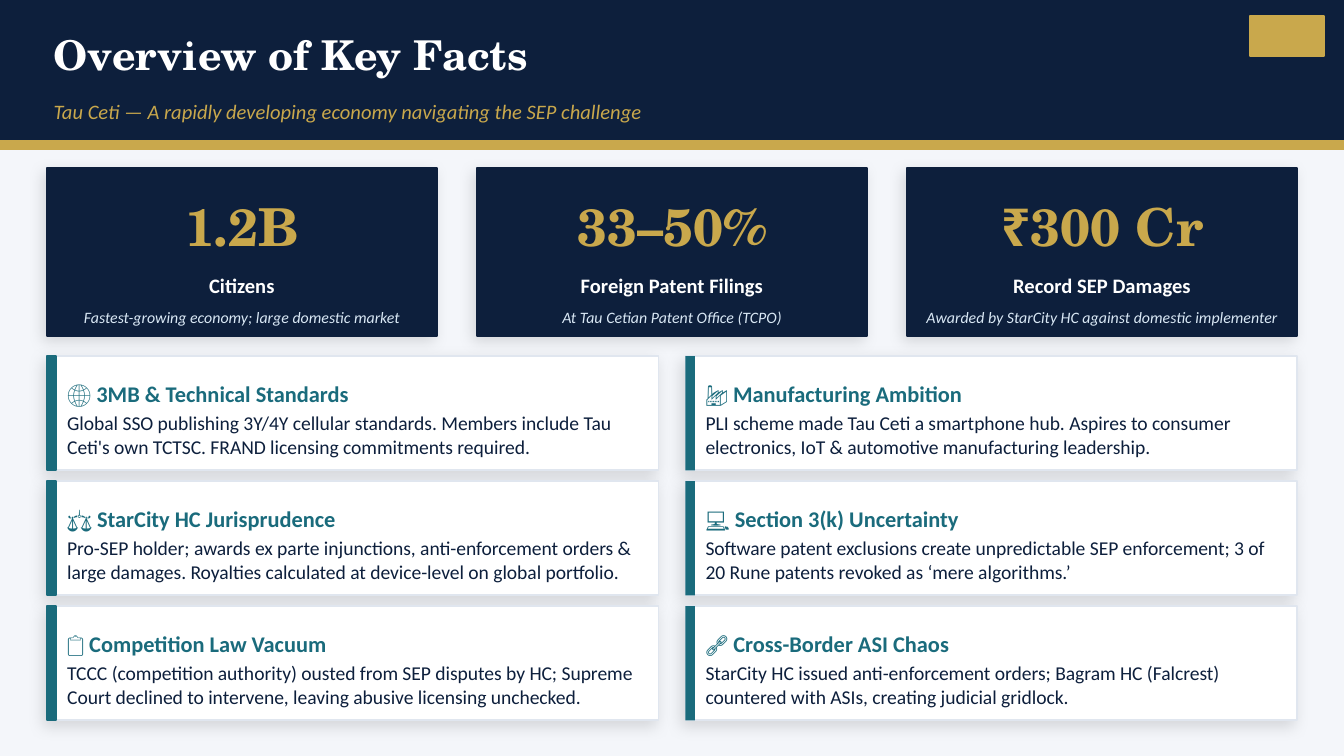
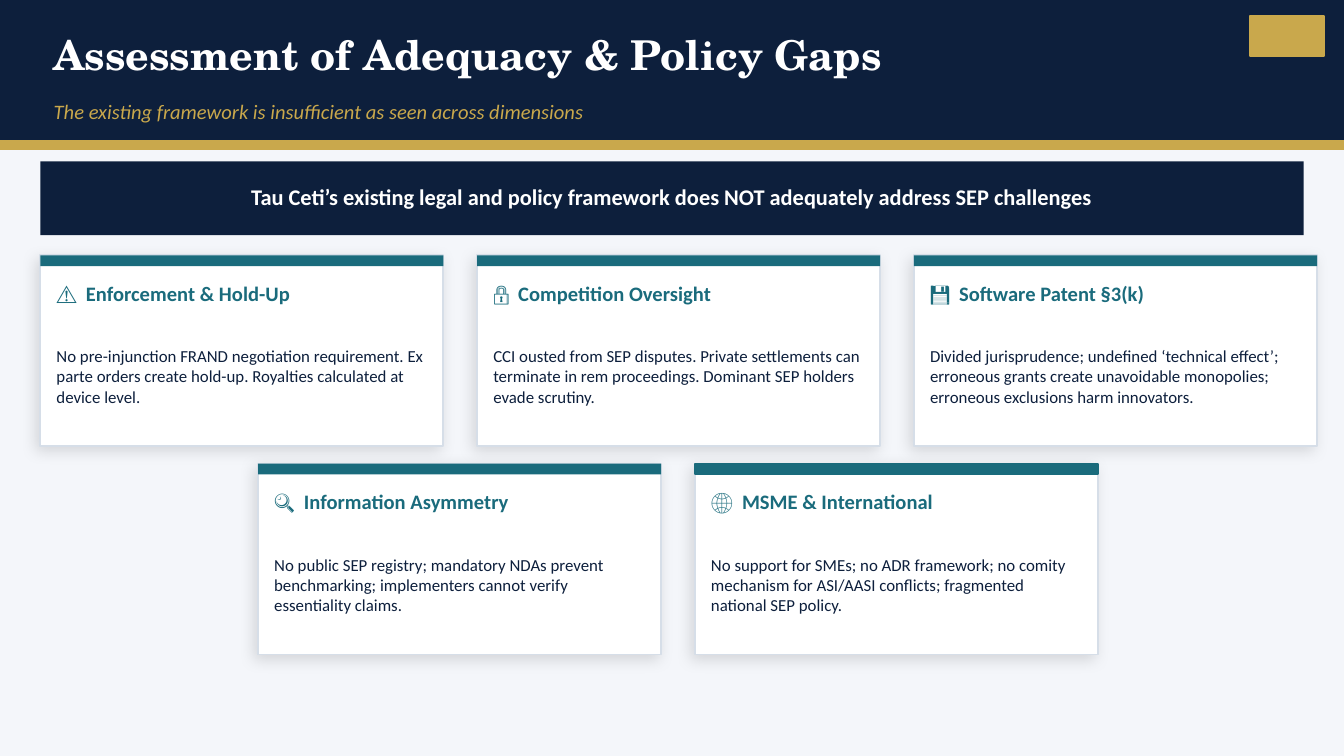
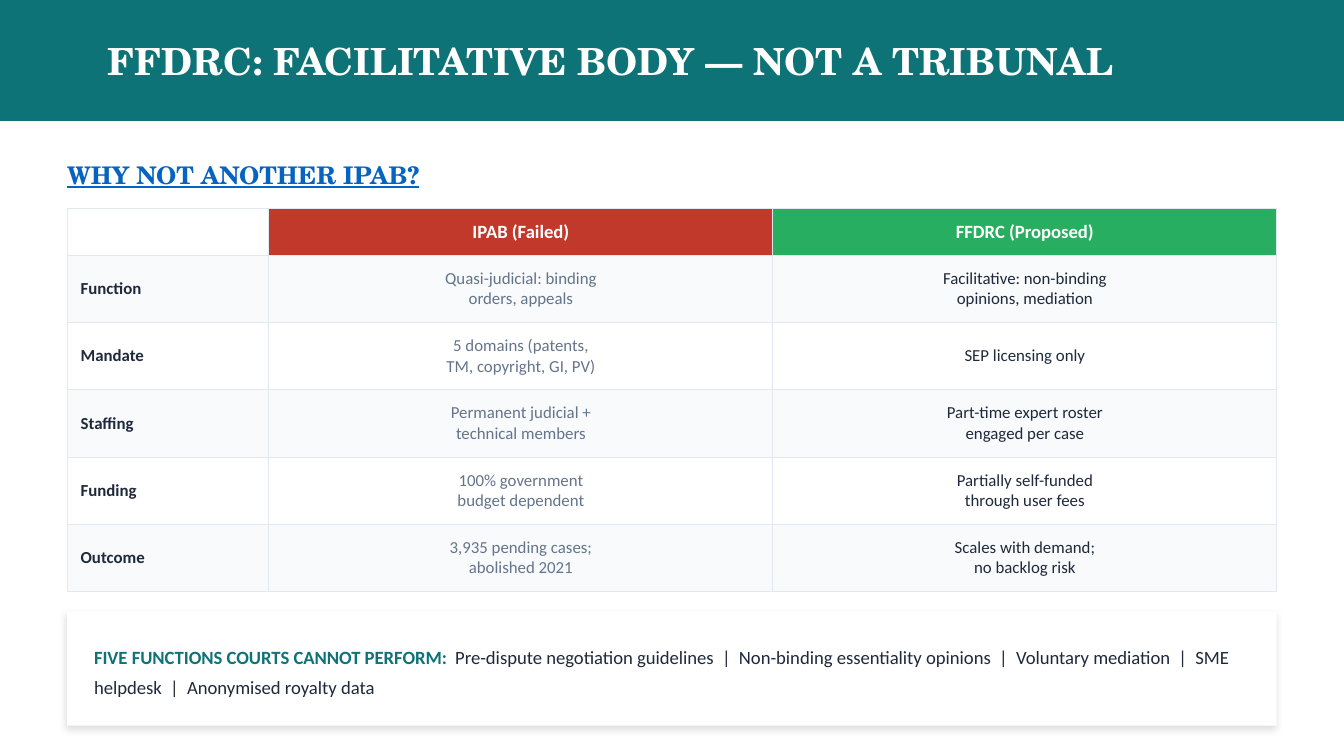
from dataclasses import dataclass

import pptx
import pptx.dml.color
import pptx.enum.shapes
import pptx.enum.text
import pptx.oxml
import pptx.oxml.ns
import pptx.util
from pptx.util import Inches


@dataclass(frozen=True)
class Theme:
    serif: str = "TeX Gyre Schola"
    sans: str = "Calibri"
    navy: str = "0D1F3C"
    gold: str = "C9A84C"
    teal: str = "1A6B7C"
    deep_teal: str = "0D7377"
    white: str = "FFFFFF"
    mist: str = "F4F6FA"
    ice: str = "D9E8F5"
    fact_edge: str = "E0E6EF"
    gap_edge: str = "D6DEE8"
    table_edge: str = "E2E8F0"
    table_band: str = "F8FAFC"
    ink: str = "1E293B"
    slate: str = "64748B"
    red: str = "C0392B"
    green: str = "27AE60"
    link: str = "0563C1"
    title_size: float = 22
    body_title_size: float = 20
    section_size: float = 13
    number_size: float = 28
    heading_size: float = 12
    label_size: float = 11
    fact_size: float = 10.5
    head_size: float = 10
    small_size: float = 9
    note_size: float = 8.5
    wide_space: int = 225


THEME = Theme()
CENTER = pptx.enum.text.PP_ALIGN.CENTER
LEFT = pptx.enum.text.PP_ALIGN.LEFT
MIDDLE = pptx.enum.text.MSO_ANCHOR.MIDDLE

STATISTICS = [
    ("1.2B", "Citizens", "Fastest-growing economy; large domestic market"),
    ("33–50%", "Foreign Patent Filings", "At Tau Cetian Patent Office (TCPO)"),
    ("₹300 Cr", "Record SEP Damages", "Awarded by StarCity HC against domestic implementer"),
]

FACT_COLUMNS = [
    [
        ("🌐 3MB & Technical Standards",
         "Global SSO publishing 3Y/4Y cellular standards. Members include Tau Ceti's own TCTSC. "
         "FRAND licensing commitments required."),
        ("⚖️ StarCity HC Jurisprudence",
         "Pro-SEP holder; awards ex parte injunctions, anti-enforcement orders & large damages. "
         "Royalties calculated at device-level on global portfolio."),
        ("📋 Competition Law Vacuum",
         "TCCC (competition authority) ousted from SEP disputes by HC; Supreme Court declined to "
         "intervene, leaving abusive licensing unchecked."),
    ],
    [
        ("🏭 Manufacturing Ambition",
         "PLI scheme made Tau Ceti a smartphone hub. Aspires to consumer electronics, IoT & "
         "automotive manufacturing leadership."),
        ("💻 Section 3(k) Uncertainty",
         "Software patent exclusions create unpredictable SEP enforcement; 3 of 20 Rune patents "
         "revoked as ‘mere algorithms.’"),
        ("🔗 Cross-Border ASI Chaos",
         "StarCity HC issued anti-enforcement orders; Bagram HC (Falcrest) countered with ASIs, "
         "creating judicial gridlock."),
    ],
]

VERDICT = "Tau Ceti’s existing legal and policy framework does NOT adequately address SEP challenges"
GAP_ROWS = [
    (0.3, [
        ("⚠️", "Enforcement & Hold-Up",
         "No pre-injunction FRAND negotiation requirement. Ex parte orders create hold-up. "
         "Royalties calculated at device level.", None),
        ("🔒", "Competition Oversight",
         "CCI ousted from SEP disputes. Private settlements can terminate in rem proceedings. "
         "Dominant SEP holders evade scrutiny.", None),
        ("💾", "Software Patent §3(k)",
         "Divided jurisprudence; undefined ‘technical effect’; erroneous grants create "
         "unavoidable monopolies; erroneous exclusions harm innovators.", None),
    ]),
    (1.92, [
        ("🔍", "Information Asymmetry",
         "No public SEP registry; mandatory NDAs prevent benchmarking; implementers cannot verify "
         "essentiality claims.", None),
        ("🌐", "MSME & International",
         "No support for SMEs; no ADR framework; no comity mechanism for ASI/AASI conflicts; "
         "fragmented national SEP policy.", THEME.teal),
    ]),
]

COMPARISON_HEAD = ["", "IPAB (Failed)", "FFDRC (Proposed)"]
COMPARISON = [
    ("Function", "Quasi-judicial: binding\norders, appeals", "Facilitative: non-binding\nopinions, mediation"),
    ("Mandate", "5 domains (patents,\nTM, copyright, GI, PV)", "SEP licensing only"),
    ("Staffing", "Permanent judicial +\ntechnical members", "Part-time expert roster\nengaged per case"),
    ("Funding", "100% government\nbudget dependent", "Partially self-funded\nthrough user fees"),
    ("Outcome", "3,935 pending cases;\nabolished 2021", "Scales with demand;\nno backlog risk"),
]
FUNCTIONS_LABEL = "FIVE FUNCTIONS COURTS CANNOT PERFORM:"
FUNCTIONS = [
    "Pre-dispute negotiation guidelines", "Non-binding essentiality opinions",
    "Voluntary mediation", "SME helpdesk", "Anonymised royalty data",
]


def rgb(color):
    return pptx.dml.color.RGBColor.from_string(color)


def add_run(paragraph, text, size, color, font=THEME.sans, bold=False, italic=False,
            underline=False, spacing=0):
    run = paragraph.add_run()
    run.text = text
    run.font.name = font
    run.font.size = pptx.util.Pt(size)
    run.font.color.rgb = rgb(color)
    run.font.bold = bold
    run.font.italic = italic
    run.font.underline = underline
    if spacing:
        run.font._element.set("spc", str(spacing))


def add_wide_space(paragraph, size, color):
    add_run(paragraph, " ", size, color, spacing=THEME.wide_space)


def add_text_box(slide, left, top, width, height, align=LEFT):
    box = slide.shapes.add_textbox(Inches(left), Inches(top), Inches(width), Inches(height))
    frame = box.text_frame
    frame.word_wrap = True
    frame.vertical_anchor = MIDDLE
    frame.margin_left = frame.margin_right = frame.margin_top = frame.margin_bottom = 0
    paragraph = frame.paragraphs[0]
    paragraph.alignment = align
    return paragraph


def add_label(slide, left, top, width, height, text, size, color, align=LEFT, **style):
    add_run(add_text_box(slide, left, top, width, height, align), text, size, color, **style)


def add_shadow(shape, blur, distance):
    effects = shape._element.spPr.find(pptx.oxml.ns.qn("a:effectLst"))
    effects.append(pptx.oxml.parse_xml(
        f'<a:outerShdw {pptx.oxml.ns.nsdecls("a")} blurRad="{pptx.util.Pt(blur)}" '
        f'dist="{pptx.util.Pt(distance)}" dir="8100000" algn="bl" rotWithShape="0">'
        '<a:srgbClr val="000000"><a:alpha val="12000"/></a:srgbClr></a:outerShdw>'))


def add_rectangle(slide, left, top, width, height, fill, line=None, shadow=None):
    shape = slide.shapes.add_shape(
        pptx.enum.shapes.MSO_SHAPE.RECTANGLE,
        Inches(left), Inches(top), Inches(width), Inches(height))
    shape.shadow.inherit = False
    shape.fill.solid()
    shape.fill.fore_color.rgb = rgb(fill)
    if line:
        shape.line.color.rgb = rgb(line)
        shape.line.width = pptx.util.Pt(1)
    else:
        shape.line.fill.background()
    if shadow:
        add_shadow(shape, *shadow)


def add_slide(presentation, background):
    slide = presentation.slides.add_slide(presentation.slide_layouts[6])
    slide.background.fill.solid()
    slide.background.fill.fore_color.rgb = rgb(background)
    return slide


def add_banner_slide(presentation, title, subtitle):
    slide = add_slide(presentation, THEME.mist)
    add_rectangle(slide, 0, 0, 10, 1.05, THEME.navy, THEME.navy)
    add_rectangle(slide, 0, 1.05, 10, 0.06, THEME.gold, THEME.gold)
    add_label(slide, 0.4, 0.1, 8.5, 0.6, title, THEME.title_size, THEME.white,
              font=THEME.serif, bold=True)
    add_label(slide, 0.4, 0.65, 8.5, 0.35, subtitle, THEME.label_size, THEME.gold, italic=True)
    add_rectangle(slide, 9.3, 0.12, 0.55, 0.3, THEME.gold, THEME.gold)
    return slide


def build_key_facts(presentation):
    slide = add_banner_slide(presentation, "Overview of Key Facts",
                             "Tau Ceti — A rapidly developing economy navigating the SEP challenge")
    for index, (number, label, note) in enumerate(STATISTICS):
        left = 0.35 + 3.2 * index
        add_rectangle(slide, left, 1.25, 2.9, 1.25, THEME.navy, THEME.navy, (8, 3))
        add_label(slide, left + 0.1, 1.35, 2.7, 0.65, number, THEME.number_size, THEME.gold,
                  CENTER, font=THEME.serif, bold=True)
        add_label(slide, left + 0.1, 1.98, 2.7, 0.28, label, THEME.label_size, THEME.white,
                  CENTER, bold=True)
        add_label(slide, left + 0.1, 2.25, 2.7, 0.22, note, THEME.note_size, THEME.ice,
                  CENTER, italic=True)
    for column, facts in enumerate(FACT_COLUMNS):
        left = 0.35 + 4.75 * column
        bar_line = THEME.teal if column == 0 else None
        for row, (heading, body) in enumerate(facts):
            top = 2.65 + 0.93 * row
            add_rectangle(slide, left, top, 4.55, 0.85, THEME.white, THEME.fact_edge, (8, 3))
            add_rectangle(slide, left, top, 0.07, 0.85, THEME.teal, bar_line)
            add_label(slide, left + 0.15, top + 0.1, 4.35, 0.35, heading, THEME.heading_size,
                      THEME.teal, bold=True)
            add_label(slide, left + 0.15, top + 0.42, 4.3, 0.33, body, THEME.fact_size, THEME.navy)


def build_policy_gaps(presentation):
    slide = add_banner_slide(presentation, "Assessment of Adequacy & Policy Gaps",
                             "The existing framework is insufficient as seen across dimensions")
    add_rectangle(slide, 0.3, 1.2, 9.4, 0.55, THEME.navy)
    add_label(slide, 0.4, 1.25, 9.2, 0.42, VERDICT, THEME.heading_size, THEME.white,
              CENTER, bold=True)
    for row, (row_left, gaps) in enumerate(GAP_ROWS):
        top = 1.9 + 1.55 * row
        for column, (icon, heading, body, bar_line) in enumerate(gaps):
            left = row_left + 3.25 * column
            add_rectangle(slide, left, top, 3, 1.42, THEME.white, THEME.gap_edge, (8, 3))
            add_rectangle(slide, left, top, 3, 0.08, THEME.teal, bar_line)
            paragraph = add_text_box(slide, left + 0.12, top + 0.12, 2.75, 0.32)
            add_run(paragraph, icon, THEME.label_size, THEME.teal, bold=True)
            add_wide_space(paragraph, THEME.label_size, THEME.teal)
            add_run(paragraph, heading, THEME.label_size, THEME.teal, bold=True)
            add_label(slide, left + 0.12, top + 0.45, 2.75, 0.9, body, THEME.small_size, THEME.navy)


def add_cell_borders(cell):
    properties = cell._tc.get_or_add_tcPr()
    for index, side in enumerate(("lnL", "lnR", "lnT", "lnB")):
        properties.insert(index, pptx.oxml.parse_xml(
            f'<a:{side} {pptx.oxml.ns.nsdecls("a")} w="{pptx.util.Pt(0.5)}">'
            f'<a:solidFill><a:srgbClr val="{THEME.table_edge}"/></a:solidFill></a:{side}>'))


def fill_cell(cell, text, fill, size, color, align, bold):
    cell.fill.solid()
    cell.fill.fore_color.rgb = rgb(fill)
    cell.vertical_anchor = MIDDLE
    cell.margin_top = cell.margin_bottom = 0
    add_cell_borders(cell)
    for index, line in enumerate(text.split("\n") if text else []):
        frame = cell.text_frame
        paragraph = frame.add_paragraph() if index else frame.paragraphs[0]
        paragraph.alignment = align
        add_run(paragraph, line, size, color, bold=bold)


def add_comparison_table(slide):
    widths = [1.5, 3.75, 3.75]
    heights = [0.35] + [0.5] * len(COMPARISON)
    table = slide.shapes.add_table(
        len(heights), len(widths), Inches(0.5), Inches(1.55),
        Inches(sum(widths)), Inches(sum(heights))).table
    table.first_row = table.horz_banding = False
    for column, width in zip(table.columns, widths):
        column.width = Inches(width)
    for row, height in zip(table.rows, heights):
        row.height = Inches(height)
    head_fills = [THEME.white, THEME.red, THEME.green]
    for column, (text, fill) in enumerate(zip(COMPARISON_HEAD, head_fills)):
        fill_cell(table.cell(0, column), text, fill, THEME.head_size, THEME.white, CENTER, True)
    colors = [THEME.ink, THEME.slate, THEME.ink]
    for row, texts in enumerate(COMPARISON, 1):
        fill = THEME.table_band if row % 2 else THEME.white
        for column, (text, color) in enumerate(zip(texts, colors)):
            fill_cell(table.cell(row, column), text, fill, THEME.small_size, color,
                      CENTER if column else LEFT, column == 0)


def build_facilitative_body(presentation):
    slide = add_slide(presentation, THEME.white)
    add_rectangle(slide, 0, 0, 10, 0.9, THEME.deep_teal)
    add_label(slide, 0.8, 0.1, 9, 0.7, "FFDRC: FACILITATIVE BODY — NOT A TRIBUNAL",
              THEME.body_title_size, THEME.white, font=THEME.serif, bold=True)
    add_label(slide, 0.5, 1.15, 9, 0.3, "WHY NOT ANOTHER IPAB?", THEME.section_size, THEME.link,
              font=THEME.serif, bold=True, underline=True)
    add_comparison_table(slide)
    add_rectangle(slide, 0.5, 4.55, 9, 0.85, THEME.white, shadow=(4, 2))
    paragraph = add_text_box(slide, 0.7, 4.6, 8.6, 0.75)
    paragraph.line_spacing = 1.3
    add_run(paragraph, FUNCTIONS_LABEL, THEME.head_size, THEME.deep_teal, bold=True)
    for index, function in enumerate(FUNCTIONS):
        add_wide_space(paragraph, THEME.head_size, THEME.ink)
        if index:
            add_run(paragraph, "|", THEME.head_size, THEME.ink)
            add_wide_space(paragraph, THEME.head_size, THEME.ink)
        add_run(paragraph, function, THEME.head_size, THEME.ink)


def main():
    presentation = pptx.Presentation()
    presentation.slide_width = Inches(10)
    presentation.slide_height = presentation.slide_width * 9 // 16
    build_key_facts(presentation)
    build_policy_gaps(presentation)
    build_facilitative_body(presentation)
    presentation.save("out.pptx")


if __name__ == "__main__":
    main()
